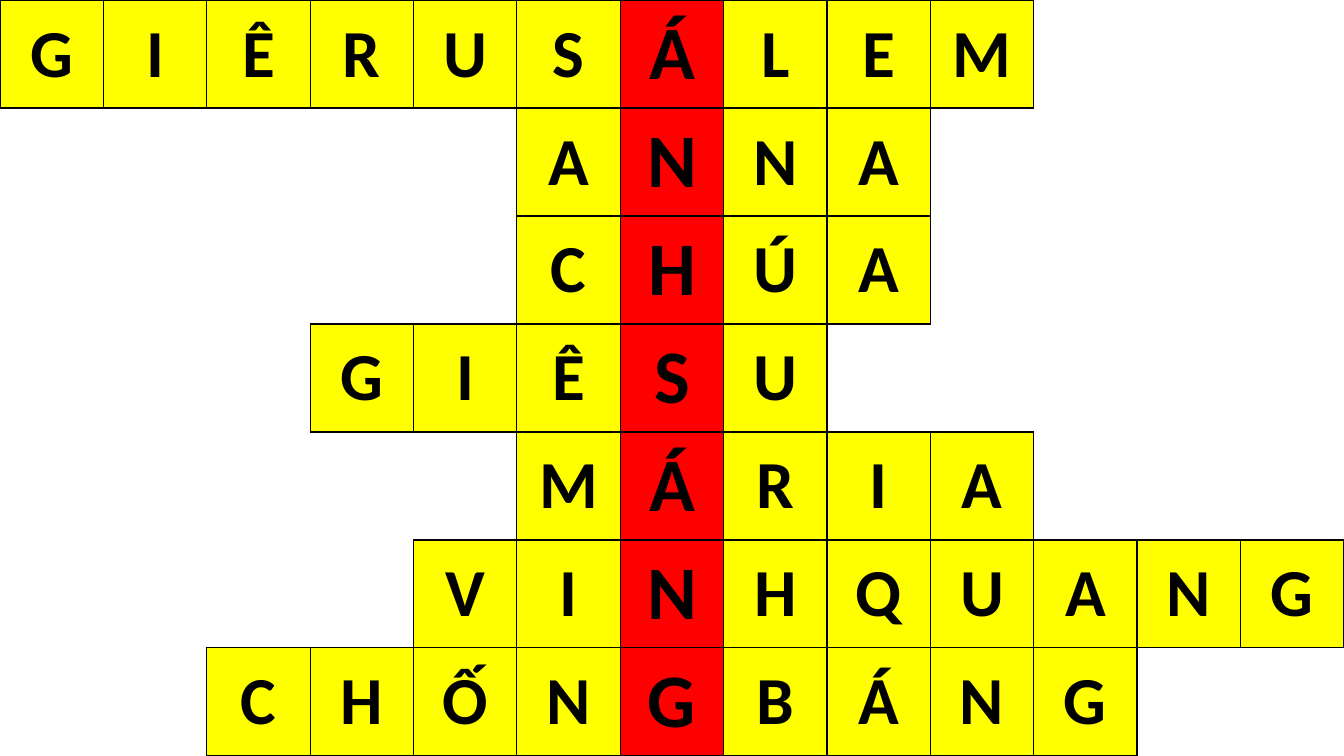
from lxml.etree import Element, SubElement
from pptx import Presentation
from pptx.dml.color import RGBColor
from pptx.enum.text import MSO_ANCHOR, PP_ALIGN
from pptx.oxml.ns import qn
from pptx.util import Cm, Pt

COLOURS = {"letter": "FFFF00", "key": "FF0000", "empty": "FFFFFF", "ink": "000000"}
WIDTH, HEIGHT = Cm(33.87), Cm(19.05)
COLUMNS = 13
KEY_COLUMN = 6

# Each answer with the column of its first letter
ANSWERS = [
    ("GIÊRUSÁLEM", 0),
    ("ANNA", 5),
    ("CHÚA", 5),
    ("GIÊSU", 3),
    ("MÁRIA", 5),
    ("VINHQUANG", 4),
    ("CHỐNGBÁNG", 2),
]
# Border tags in schema order, with the step to the neighbouring cell
SIDES = {"a:lnL": (0, -1), "a:lnR": (0, 1), "a:lnT": (-1, 0), "a:lnB": (1, 0)}


def place_letters():
    return {
        (row, start + i): letter
        for row, (answer, start) in enumerate(ANSWERS)
        for i, letter in enumerate(answer)
    }


def fill_square(square, colour):
    square.fill.solid()
    square.fill.fore_color.rgb = RGBColor.from_string(COLOURS[colour])


def write_letter(square, letter, size):
    square.vertical_anchor = MSO_ANCHOR.MIDDLE
    line = square.text_frame.paragraphs[0]
    line.text = letter
    line.alignment = PP_ALIGN.CENTER
    line.font.name = "Calibri"
    line.font.size = Pt(size)
    line.font.bold = True
    line.font.color.rgb = RGBColor.from_string(COLOURS["ink"])


def draw_borders(square, position, letters):
    """Rule every side that touches a letter, and clear the others."""
    row, column = position
    properties = square._tc.get_or_add_tcPr()
    for order, (side, (down, across)) in enumerate(SIDES.items()):
        border = Element(qn(side), w=str(Pt(1)))
        if position in letters or (row + down, column + across) in letters:
            ink = SubElement(border, qn("a:solidFill"))
            SubElement(ink, qn("a:srgbClr"), val=COLOURS["ink"])
        else:
            SubElement(border, qn("a:noFill"))
        properties.insert(order, border)


def add_crossword(slide):
    letters = place_letters()
    crossword = slide.shapes.add_table(
        len(ANSWERS), COLUMNS, 0, 0, WIDTH, HEIGHT
    ).table
    crossword.first_row = False
    crossword.horz_banding = False

    for row in range(len(ANSWERS)):
        for column in range(COLUMNS):
            position = (row, column)
            square = crossword.cell(row, column)
            is_key = column == KEY_COLUMN
            if position in letters:
                fill_square(square, "key" if is_key else "letter")
                write_letter(square, letters[position], 54 if is_key else 48)
            else:
                fill_square(square, "empty")
            draw_borders(square, position, letters)


def main():
    deck = Presentation()
    deck.slide_width, deck.slide_height = WIDTH, HEIGHT
    slide = deck.slides.add_slide(deck.slide_layouts[6])
    add_crossword(slide)
    deck.save("out.pptx")


if __name__ == "__main__":
    main()
